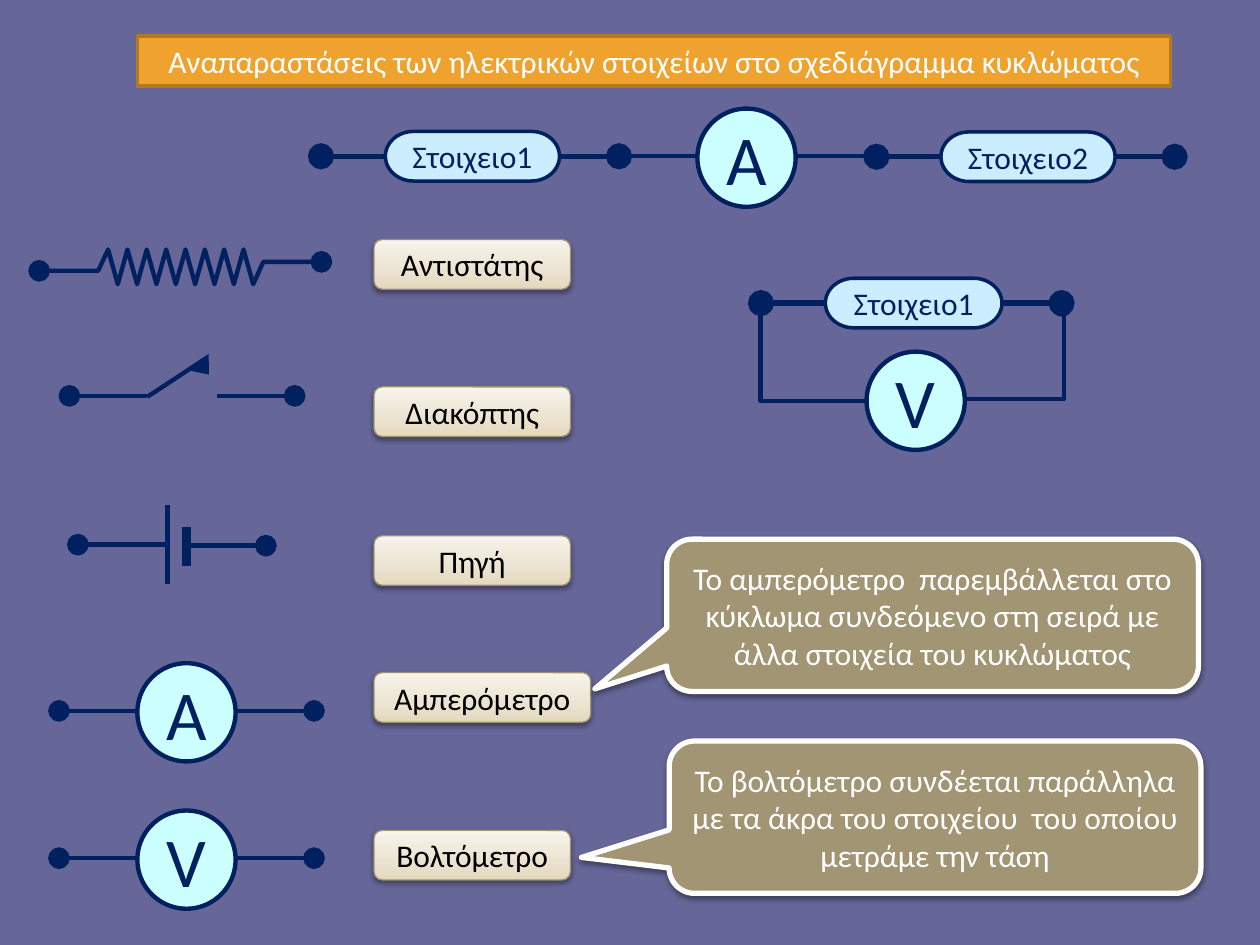
from lxml import etree
from pptx import Presentation
from pptx.dml.color import RGBColor
from pptx.enum.shapes import MSO_CONNECTOR, MSO_SHAPE
from pptx.enum.text import MSO_ANCHOR, PP_ALIGN
from pptx.oxml.ns import qn
from pptx.util import Cm, Pt

ROUND, OVAL, TRI = MSO_SHAPE.ROUNDED_RECTANGLE, MSO_SHAPE.OVAL, MSO_SHAPE.ISOSCELES_TRIANGLE
PILL, CALL = MSO_SHAPE.FLOWCHART_TERMINATOR, MSO_SHAPE.ROUNDED_RECTANGULAR_CALLOUT
LINE, BENT = MSO_CONNECTOR.STRAIGHT, MSO_CONNECTOR.ELBOW

# Content, lengths in cm
TITLE = "Αναπαραστάσεις των ηλεκτρικών στοιχείων στο σχεδιάγραμμα κυκλώματος"
LABELS = [  # text, top, width
    ("Αντιστάτης", 4.83, 3.96),
    ("Διακόπτης", 7.8, 3.96),
    ("Πηγή", 10.8, 3.96),
    ("Αμπερόμετρο", 13.56, 4.37),
    ("Βολτόμετρο", 16.74, 3.96),
]
NOTES = [  # text, left, top, pointer
    ("Το αμπερόμετρο  παρεμβάλλεται στο κύκλωμα συνδεόμενο στη σειρά "
     "με άλλα στοιχεία του κυκλώματος", 13.44, 10.87, (-0.635, 0.483)),
    ("Το βολτόμετρο συνδέεται παράλληλα με τα άκρα του στοιχείου  "
     "του οποίου μετράμε την τάση", 13.49, 14.94, (-0.665, 0.264)),
]
PARTS = [  # text, left, top, width
    ("Στοιχειο1", 7.77, 2.65, 3.51),
    ("Στοιχειο2", 18.97, 2.66, 3.51),
    ("Στοιχειο1", 16.64, 5.61, 3.56),
]
METERS = [  # letter, centre x, centre y, has straight wires
    ("A", 3.76, 14.36, True),
    ("V", 3.76, 17.33, True),
    ("A", 15.05, 3.18, True),
    ("V", 18.46, 8.08, False),
]
WIRES = [  # from, to, weight, dotted ends
    ((1.4, 7.98), (2.97, 7.98), "wire", ["head"]),
    ((4.37, 7.98), (5.94, 7.98), "wire", ["tail"]),
    ((2.97, 8.0), (4.17, 7.21), "wire", []),
    ((1.57, 10.98), (3.38, 10.98), "wire", ["head"]),
    ((3.76, 11.0), (5.36, 11.0), "wire", ["tail"]),
    ((3.38, 10.19), (3.38, 11.78), "wire", []),
    ((3.76, 10.62), (3.76, 11.4), "plate", []),
]
BENDS = [  # from, to, dotted end, bend position
    ((15.32, 6.1), (17.47, 8.08), "head", 0.005),
    ((19.46, 8.05), (21.41, 6.17), "tail", 1.021),
]

THEME = {
    "font": "Calibri",
    "size": {"text": 18, "meter": 40},
    "line": {"wire": 2.5, "lead": 3, "plate": 5.5},
    "back": "666699",
    "ink": "002060",
    "grad": [(0, "E4D8BC"), (35, "EBE3D0"), (100, "F8F4EC")],
    # fill, line colour, line width, text colour, text size, shadow
    "title": ("F0A22E", "B27822", 2, "FFFFFF", "text", False),
    "label": (None, "9F9270", 0.75, "000000", "text", True),
    "note": ("A19574", "FFFFFF", 3, "FFFFFF", "text", True),
    "part": ("CCECFF", "002060", 2, "002060", "text", False),
    "meter": ("CCFFFF", "002060", 2.5, "002060", "meter", False),
}
HIGH, DIAM, REACH = 1.0, 1.98, 1.58


def rgb(hue):
    return RGBColor.from_string(hue)


def put(obj, **fmt):
    for key, val in fmt.items():
        setattr(obj, key, val)


def node(up, tag, **attrs):
    return etree.SubElement(up, qn(tag), attrs)


def paint(shape, hue):
    shape.fill.solid()
    shape.fill.fore_color.rgb = rgb(hue)


def stroke(shape, hue, width):
    shape.line.color.rgb = rgb(hue)
    shape.line.width = Pt(width)


def blend(shape):
    shape.fill.gradient()
    grad = shape.fill._fill._gradFill
    stops = grad.find(qn("a:gsLst"))
    for old in list(stops):
        stops.remove(old)
    for pos, hue in THEME["grad"]:
        stop = node(stops, "a:gs", pos=str(pos * 1000))
        node(stop, "a:srgbClr", val=hue)
    grad.find(qn("a:lin")).set("ang", "16200000")


def shade(shape):
    fx = shape._element.spPr.find(qn("a:effectLst"))
    drop = node(fx, "a:outerShdw", blurRad="40000", dist="20000",
                dir="5400000", rotWithShape="0")
    node(node(drop, "a:srgbClr", val="000000"), "a:alpha", val="38000")


def dress(shape, text, style):
    fill, edge, width, hue, size, shadow = THEME[style]
    if fill:
        paint(shape, fill)
    else:
        blend(shape)
    stroke(shape, edge, width)
    shape.shadow.inherit = False
    if shadow:
        shade(shape)
    frame = shape.text_frame
    put(frame, text=text, word_wrap=True, vertical_anchor=MSO_ANCHOR.MIDDLE)
    para = frame.paragraphs[0]
    para.alignment = PP_ALIGN.CENTER
    put(para.font, name=THEME["font"], size=Pt(THEME["size"][size]))
    para.font.color.rgb = rgb(hue)


def add(slide, kind, box):
    return slide.shapes.add_shape(kind, *map(Cm, box))


def dots(shape, ends):
    for end in ends:
        node(shape.line._get_or_add_ln(), f"a:{end}End", type="oval", w="lg", len="lg")


def wire(slide, start, stop, weight, ends, kind=LINE):
    link = slide.shapes.add_connector(kind, *map(Cm, start + stop))
    stroke(link, THEME["ink"], THEME["line"][weight])
    dots(link, ends)
    node(link._element.spPr, "a:effectLst")
    return link


def coil(slide):
    zig = [(2.18 + 0.195 * i, 5.73 if i % 2 else 5.03) for i in range(16)]
    pts = [(0.79, 5.46), (1.98, 5.46), *zig, (5.31, 5.28), (6.48, 5.28)]
    pts = [(Cm(x), Cm(y)) for x, y in pts]
    form = slide.shapes.build_freeform(*pts[0])
    form.add_line_segments(pts[1:], close=False)
    shape = form.convert_to_shape()
    shape.fill.background()
    stroke(shape, THEME["ink"], THEME["line"]["wire"])
    dots(shape, ["head", "tail"])
    shape.shadow.inherit = False


def main():
    deck = Presentation()
    put(deck, slide_width=Cm(25.4), slide_height=Cm(19.05))
    slide = deck.slides.add_slide(deck.slide_layouts[5])
    paint(slide.background, THEME["back"])

    # Title
    title = slide.shapes.title
    put(title, left=Cm(2.77), top=Cm(0.73), width=Cm(20.83), height=Cm(HIGH))
    geom = node(title._element.spPr, "a:prstGeom", prst="roundRect")
    node(geom, "a:avLst")
    dress(title, TITLE, "title")

    # Resistor, switch and source
    coil(slide)
    for row in WIRES:
        wire(slide, *row)
    tip = add(slide, TRI, (3.84, 7.26, 0.53, 0.33))
    tip.rotation = 140.8
    paint(tip, THEME["ink"])
    tip.line.fill.background()
    tip.shadow.inherit = False

    # Labels and notes
    for text, top, wide in LABELS:
        dress(add(slide, ROUND, (7.54, top, wide, HIGH)), text, "label")
    for text, left, top, (dx, dy) in NOTES:
        note = add(slide, CALL, (left, top, 10.72, 3.07))
        note.adjustments[0], note.adjustments[1] = dx, dy
        dress(note, text, "note")

    # Circuit elements with their leads
    for text, left, top, wide in PARTS:
        dress(add(slide, PILL, (left, top, wide, HIGH)), text, "part")
        mid, right = top + HIGH / 2, left + wide
        wire(slide, (right, mid), (right + 1.2, mid), "lead", ["tail"])
        wire(slide, (left, mid), (left - 1.3, mid), "lead", ["tail"])

    # Bent wires and meters
    for start, stop, end, turn in BENDS:
        link = wire(slide, start, stop, "wire", [end], BENT)
        geom = link._element.spPr.find(qn("a:prstGeom"))
        node(geom.find(qn("a:avLst")), "a:gd", name="adj1",
             fmla=f"val {round(turn * 100000)}")
    rad = DIAM / 2
    for text, x, y, straight in METERS:
        if straight:
            row = y - 0.03
            for side, end in ((-1, "head"), (1, "tail")):
                ends = sorted([(x + side * rad, row), (x + side * (rad + REACH), row)])
                wire(slide, *ends, "wire", [end])
        dress(add(slide, OVAL, (x - rad, y - rad, DIAM, DIAM)), text, "meter")

    deck.save("out.pptx")


if __name__ == "__main__":
    main()
